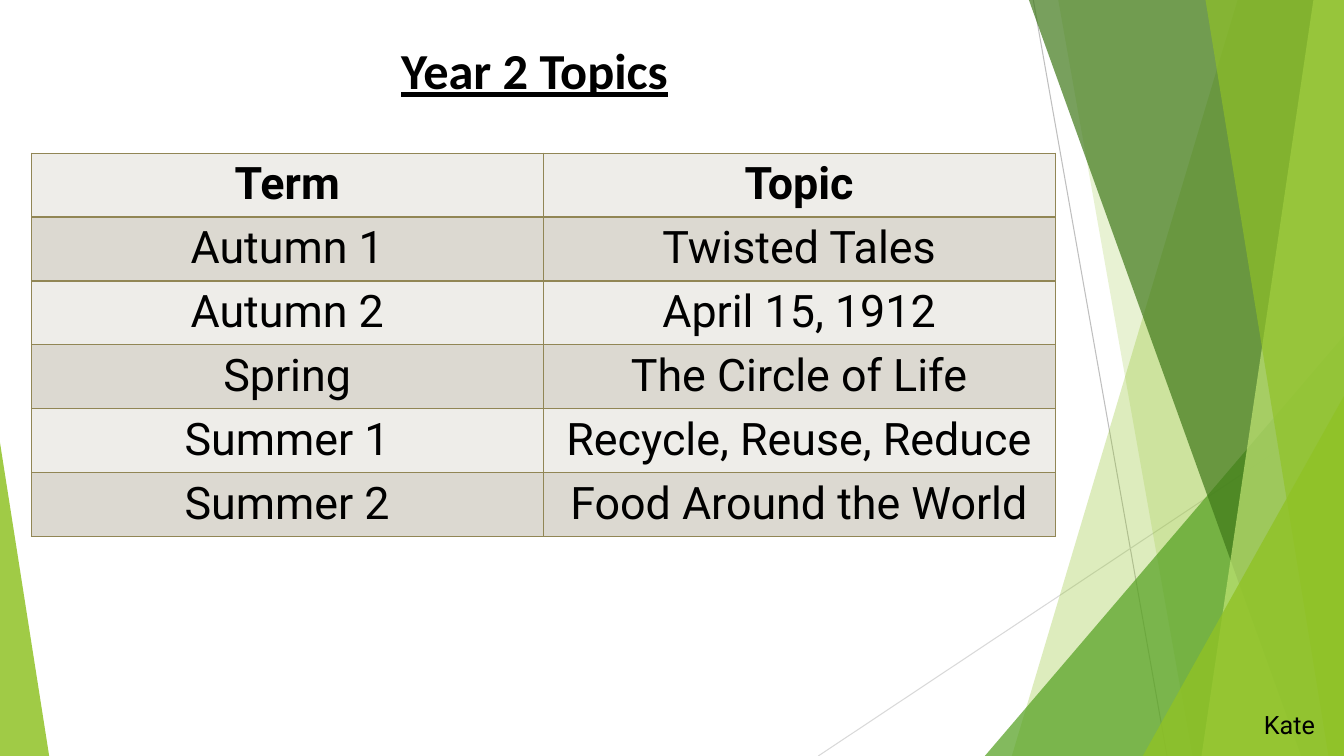
import pptx
import pptx.dml.color
import pptx.enum.shapes
import pptx.enum.text
import pptx.oxml.ns
import pptx.util
from lxml import etree
from pptx.util import Cm

RGBColor = pptx.dml.color.RGBColor
BLACK = RGBColor(0x00, 0x00, 0x00)
LIME = RGBColor(0x90, 0xC2, 0x26)
PALE_LIME = RGBColor(0xC0, 0xE4, 0x74)
GREEN = RGBColor(0x54, 0xA0, 0x21)
DARK_GREEN = RGBColor(0x3F, 0x78, 0x19)
GREY = RGBColor(0xBF, 0xBF, 0xBF)
LIGHT_GREY = RGBColor(0xD9, 0xD9, 0xD9)
LIGHT_ROW = RGBColor(0xEE, 0xED, 0xE9)
DARK_ROW = RGBColor(0xDC, 0xD9, 0xD1)
BORDER = RGBColor(0x91, 0x86, 0x55)
WIDTH, HEIGHT = 33.87, 19.05

TOPICS = [
    ("Term", "Topic"),
    ("Autumn 1", "Twisted Tales"),
    ("Autumn 2", "April 15, 1912"),
    ("Spring", "The Circle of Life"),
    ("Summer 1", "Recycle, Reuse, Reduce"),
    ("Summer 2", "Food Around the World"),
]


def add_element(parent, tag, **attributes):
    return etree.SubElement(parent, pptx.oxml.ns.qn(tag), **attributes)


def write_text(frame, text, size, font="Roboto", bold=False, underline=False, align=None):
    paragraph = frame.paragraphs[0]
    paragraph.alignment = align
    run = paragraph.add_run()
    run.text = text
    run.font.name = font
    run.font.size = pptx.util.Pt(size)
    run.font.bold = bold
    run.font.underline = underline
    run.font.color.rgb = BLACK


class TopicSlide:
    """Draws the elements of one slide in a shared style, measured in centimetres."""

    def __init__(self, slide):
        self.slide = slide
        self.shapes = slide.shapes

    def line(self, start, end, color):
        connector = self.shapes.add_connector(
            pptx.enum.shapes.MSO_CONNECTOR.STRAIGHT, *map(Cm, start + end))
        connector.line.color.rgb = color
        connector.line.width = pptx.util.Pt(0.75)
        add_element(connector.element.spPr, "a:effectLst")

    def paint(self, shape, color, opacity):
        shape.shadow.inherit = False
        shape.line.fill.background()
        shape.fill.solid()
        shape.fill.fore_color.rgb = color
        color_element = shape.element.spPr.find(".//" + pptx.oxml.ns.qn("a:srgbClr"))
        add_element(color_element, "a:alpha", val=str(opacity * 1000))

    def band(self, top_left, bottom_left, color, opacity):
        builder = self.shapes.build_freeform(Cm(top_left), 0)
        corners = [(WIDTH, 0), (WIDTH, HEIGHT), (bottom_left, HEIGHT)]
        builder.add_line_segments([(Cm(x), Cm(y)) for x, y in corners])
        self.paint(builder.convert_to_shape(), color, opacity)

    def triangle(self, left, top, width, apex, color, opacity):
        shape = self.shapes.add_shape(
            pptx.enum.shapes.MSO_SHAPE.ISOSCELES_TRIANGLE,
            Cm(left), Cm(top), Cm(width), Cm(HEIGHT - top))
        shape.adjustments[0] = apex
        self.paint(shape, color, opacity)

    def text(self, text, left, top, width, height, **style):
        box = self.shapes.add_textbox(Cm(left), Cm(top), Cm(width), Cm(height))
        box.text_frame.word_wrap = True
        write_text(box.text_frame, text, **style)

    def table(self, rows, left, top, column_width, row_height):
        columns = len(rows[0])
        table = self.shapes.add_table(
            len(rows), columns, Cm(left), Cm(top),
            Cm(column_width * columns), Cm(row_height * len(rows))).table
        for row_index, row in enumerate(rows):
            for column_index, text in enumerate(row):
                cell = table.cell(row_index, column_index)
                self.border(cell)
                cell.fill.solid()
                cell.fill.fore_color.rgb = DARK_ROW if row_index % 2 else LIGHT_ROW
                write_text(cell.text_frame, text, size=32, bold=row_index == 0,
                           align=pptx.enum.text.PP_ALIGN.CENTER)

    def border(self, cell):
        properties = cell._tc.get_or_add_tcPr()
        for side in ("a:lnL", "a:lnR", "a:lnT", "a:lnB"):
            edge = add_element(properties, side, w=str(pptx.util.Pt(1)))
            add_element(add_element(edge, "a:solidFill"), "a:srgbClr", val=str(BORDER))


def main():
    presentation = pptx.Presentation()
    presentation.slide_width = Cm(WIDTH)
    presentation.slide_height = Cm(HEIGHT)
    page = TopicSlide(presentation.slides.add_slide(presentation.slide_layouts[6]))

    page.line((26.04, 0), (29.41, HEIGHT), GREY)
    page.line((WIDTH, 10.24), (20.62, HEIGHT), LIGHT_GREY)
    page.band(31.19, 25.5, LIME, 30)
    page.band(26.67, 30.05, LIME, 20)
    page.triangle(24.82, 8.46, 9.05, 1, GREEN, 72)
    page.band(25.93, 32.79, DARK_GREEN, 70)
    page.band(33.1, 30.28, PALE_LIME, 70)
    page.band(30.38, 33.48, LIME, 65)
    page.triangle(28.8, 9.98, 5.07, 1, LIME, 80)
    page.triangle(0, 11.15, 1.24, 0, LIME, 85)

    page.text("Year 2 Topics", 9.86, 0.86, 10.31, 3,
              size=36, font="Calibri", bold=True, underline=True)
    page.table(TOPICS, 0.79, 3.86, 12.9, 1.58)
    page.text("Kate", 31.6, 17.75, 2, 1.04, size=18)
    presentation.save("out.pptx")


if __name__ == "__main__":
    main()
